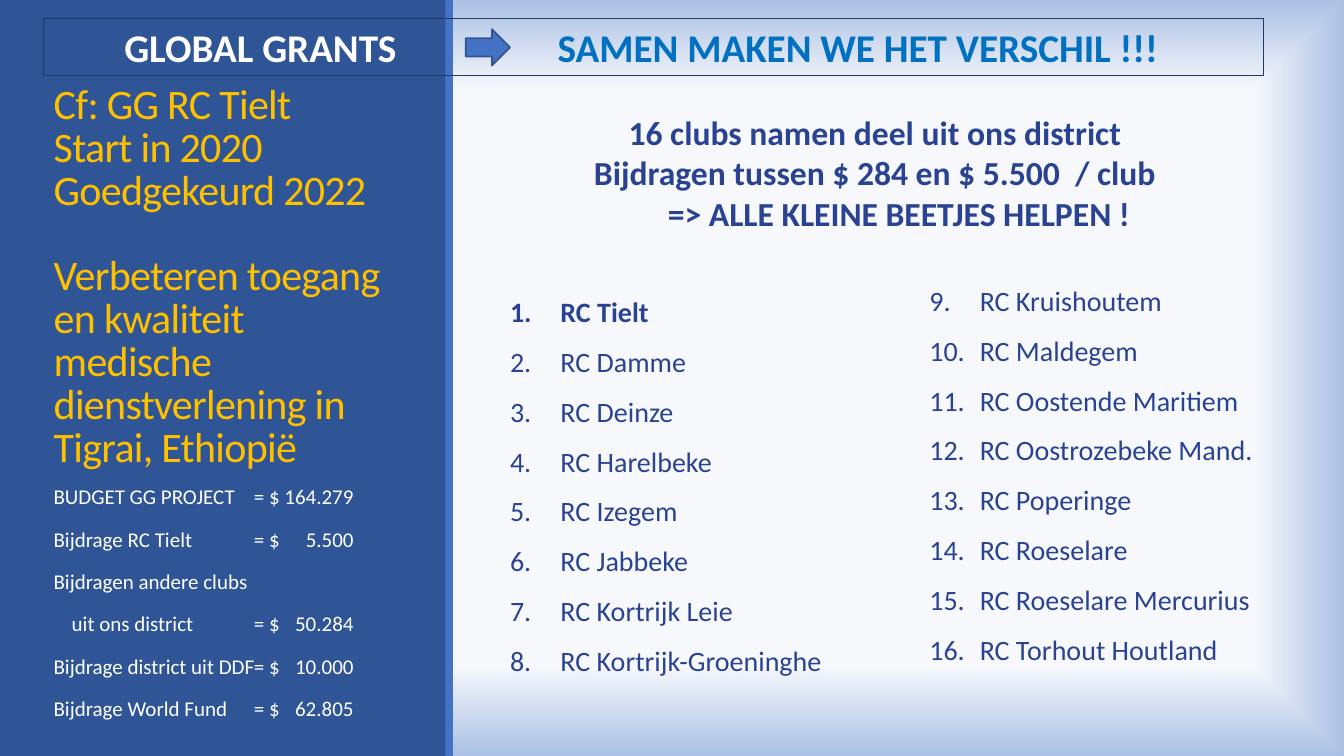
from dataclasses import dataclass

from pptx import Presentation, util as u
from pptx.dml.color import RGBColor
from pptx.enum import shapes, text
from pptx.oxml import parse_xml
from pptx.oxml.ns import nsdecls


@dataclass(frozen=True)
class Theme:
    font: str = "Calibri"
    panel: str = "2F5597"
    accent: str = "4472C4"
    arrow_line: str = "325491"
    frame: str = "203864"
    ink: str = "294392"
    gold: str = "FFC000"
    slogan: str = "0070C0"
    white: str = "FFFFFF"
    glow: tuple = ((76, "F6F8FC"), (100, "ABC0E4"))
    title: int = 30
    header: int = 28
    claim: int = 24
    clubs: int = 20
    budget: int = 15
    budget_pitch: float = 30.3


T = Theme()
CLUBS = ["RC Tielt", "RC Damme", "RC Deinze", "RC Harelbeke", "RC Izegem",
         "RC Jabbeke", "RC Kortrijk Leie", "RC Kortrijk-Groeninghe",
         "RC Kruishoutem", "RC Maldegem", "RC Oostende Maritiem",
         "RC Oostrozebeke Mand.", "RC Poperinge", "RC Roeselare",
         "RC Roeselare Mercurius", "RC Torhout Houtland"]
BUDGET = [("BUDGET GG PROJECT", "164.279", 0),
          ("Bijdrage RC Tielt", "5.500", 0),
          ("Bijdragen andere clubs", None, 0),
          ("uit ons district", "50.284", 0.18),
          ("Bijdrage district uit DDF", "10.000", 0),
          ("Bijdrage World Fund", "62.805", 0)]
TITLE = ["Cf: GG RC Tielt\vStart in 2020\vGoedgekeurd 2022",
         "Verbeteren toegang en kwaliteit medische dienstverlening in "
         "Tigrai, Ethiopië"]
CLAIM = ["16 clubs namen deel uit ons district",
         "Bijdragen tussen $ 284 en $ 5.500  / club",
         "=> ALLE KLEINE BEETJES HELPEN !"]


def write(tf, words, size, color, bold=False, align=text.PP_ALIGN.LEFT, line=None,
          before=0, after=0, indent=0, hanging=0, number=None, spacing=None):
    """Add a paragraph; number starts automatic numbering, spacing is in points."""
    p = tf.paragraphs[0]
    if p.runs:
        p = tf.add_paragraph()
    p.alignment = align
    p.line_spacing, p.space_before, p.space_after = line, u.Pt(before), u.Pt(after)
    pPr = p._p.get_or_add_pPr()
    pPr.set("marL", str(u.Inches(indent)))
    pPr.set("indent", str(-u.Inches(hanging)))
    if number:
        pPr.append(parse_xml(f'<a:buAutoNum {nsdecls("a")} type="arabicPeriod" '
                             f'startAt="{number}"/>'))
    for i, part in enumerate(words.split("\v")):
        if i:
            p.add_line_break()
        r = p.add_run()
        r.text = part
        r.font.name, r.font.size, r.font.bold = T.font, u.Pt(size), bold
        r.font.color.rgb = RGBColor.from_string(color)
        if spacing:
            r._r.get_or_add_rPr().set("spc", str(round(spacing * 100)))


class Page:
    """A slide on which every box is given in percent of the slide's size."""

    def __init__(self, prs):
        self.prs = prs
        self.s = prs.slides.add_slide(prs.slide_layouts[5])

    def box(self, x, y, w, h):
        wide, high = self.prs.slide_width, self.prs.slide_height
        return [round(v * side / 100) for v, side in zip((x, y, w, h), (wide, high) * 2)]

    def background(self, stops):
        gs = "".join(f'<a:gs pos="{pos * 1000}"><a:srgbClr val="{c}"/></a:gs>'
                     for pos, c in stops)
        self.s._element.cSld.insert(0, parse_xml(
            f'<p:bg {nsdecls("p", "a")}><p:bgPr><a:gradFill><a:gsLst>{gs}</a:gsLst>'
            '<a:path path="rect"><a:fillToRect l="50000" t="50000" r="50000" b="50000"/>'
            '</a:path></a:gradFill><a:effectLst/></p:bgPr></p:bg>'))

    def shape(self, area, kind=shapes.MSO_SHAPE.RECTANGLE, fill=None, line=None, weight=0.75):
        sp = self.s.shapes.add_shape(kind, *self.box(*area))
        sp.shadow.inherit = False
        if fill:
            sp.fill.solid()
            sp.fill.fore_color.rgb = RGBColor.from_string(fill)
        else:
            sp.fill.background()
        if line:
            sp.line.color.rgb = RGBColor.from_string(line)
            sp.line.width = u.Pt(weight)
        else:
            sp.line.fill.background()
        return sp

    def text(self, area, inset=0.1):
        tf = self.s.shapes.add_textbox(*self.box(*area)).text_frame
        tf.word_wrap = True
        tf.margin_left = tf.margin_right = u.Inches(inset)
        return tf

    def title(self, area):
        """Place the title in front of what has been drawn so far."""
        sp = self.s.shapes.title
        sp.left, sp.top, sp.width, sp.height = self.box(*area)
        tree = sp.element.getparent()
        tree.append(sp.element)
        tf = sp.text_frame
        tf.word_wrap = True
        tf.auto_size = text.MSO_AUTO_SIZE.NONE
        tf.vertical_anchor = text.MSO_ANCHOR.BOTTOM
        return tf

    def club_list(self, area, clubs, start):
        tf = self.text(area, inset=0)
        for club in clubs:
            write(tf, club, T.clubs, T.ink, bold=club == CLUBS[0], line=0.9, before=12,
                  after=2, indent=0.5, hanging=0.5, number=start)

    def budget(self, label_area, amount_area):
        """Set labels, equal signs and right-aligned amounts on shared lines."""
        labels, signs, amounts = (self.text(a) for a in (label_area, amount_area, amount_area))
        fmt = dict(size=T.budget, color=T.white, line=0.9, after=2)
        gap = 12
        for label, amount, indent in BUDGET:
            write(labels, label, before=12, indent=indent, **fmt)
            if amount is None:
                gap += T.budget_pitch
                continue
            write(signs, "= $", before=gap, **fmt)
            write(amounts, amount, before=gap, align=text.PP_ALIGN.RIGHT, **fmt)
            gap = 12

    def header(self, area, slogan_left):
        x, y, w, h = area
        left = self.shape(area, line=T.frame).text_frame
        left.margin_left = u.Inches(0.8)
        right = self.text((slogan_left, y, x + w - slogan_left, h))
        for tf, words, color in ((left, "GLOBAL GRANTS", T.white),
                                 (right, "SAMEN MAKEN WE HET VERSCHIL !!!", T.slogan)):
            tf.vertical_anchor = text.MSO_ANCHOR.MIDDLE
            write(tf, words, T.header, color, bold=True)


def main():
    prs = Presentation()
    prs.slide_width, prs.slide_height = u.Inches(13.33), u.Inches(7.5)
    page = Page(prs)
    page.background(T.glow)
    page.shape((0, 0, 33.2, 100), fill=T.panel)
    page.shape((33.15, 0, 0.55, 100), fill=T.accent)

    tf = page.title((3.25, 9.73, 26.25, 53.2))
    for words, gap in zip(TITLE, (0, 30.5)):
        write(tf, words, T.title, T.gold, line=0.85, before=gap, spacing=-0.5)

    half = len(CLUBS) // 2
    page.club_list((37.95, 38.8, 26.25, 55.73), CLUBS[:half], 1)
    page.club_list((69.15, 37.33, 26.25, 52.67), CLUBS[half:], half + 1)
    page.budget((3.25, 63.73, 26.25, 34), (18.15, 63.73, 8.9, 34))
    page.header((3.25, 2.4, 90.75, 7.6), 40.75)

    tf = page.text((41.1, 14.13, 48, 17.47))
    for words, indent in zip(CLAIM, (0, 0, 0.48)):
        write(tf, words, T.claim, T.ink, bold=True, align=text.PP_ALIGN.CENTER, indent=indent)

    page.shape((34.65, 3.87, 3.3, 4.8), shapes.MSO_SHAPE.RIGHT_ARROW, T.accent,
               T.arrow_line, 1.25)
    prs.save("out.pptx")


if __name__ == "__main__":
    main()
